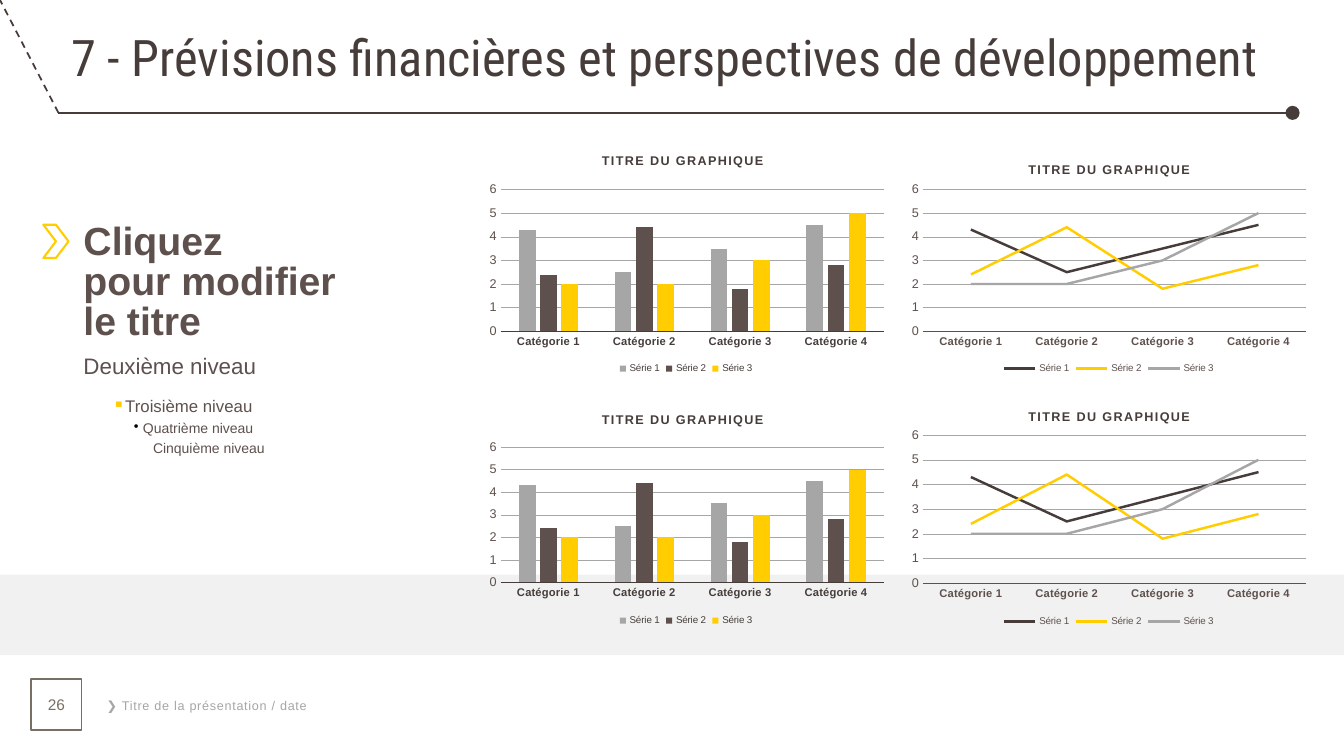
from pptx import Presentation
from pptx.chart.data import CategoryChartData
from pptx.dml.color import RGBColor
from pptx.enum.chart import XL_CHART_TYPE, XL_LEGEND_POSITION, XL_TICK_MARK
from pptx.enum.dml import MSO_LINE
from pptx.enum.shapes import MSO_CONNECTOR, MSO_SHAPE
from pptx.enum.text import MSO_ANCHOR, PP_ALIGN
from pptx.oxml import parse_xml
from pptx.oxml.ns import nsdecls, qn
from pptx.util import Inches, Pt
from lxml import etree

COLUMN, LINE = XL_CHART_TYPE.COLUMN_CLUSTERED, XL_CHART_TYPE.LINE
NO_TICK, LEGEND_BOTTOM = XL_TICK_MARK.NONE, XL_LEGEND_POSITION.BOTTOM
MIDDLE, TOP = MSO_ANCHOR.MIDDLE, MSO_ANCHOR.TOP
CENTER, JUSTIFY = PP_ALIGN.CENTER, PP_ALIGN.JUSTIFY

# Content
COLORS = {"dark": "463D3A", "brown": "5E514D", "taupe": "786E64", "yellow": "FFCD00",
          "grey": "A6A6A6", "band": "D9D9D9", "black": "000000"}
BODY_FONT, TITLE_FONT = "Arial", "Roboto Condensed"
TITLE = "7 - Prévisions financières et perspectives de développement"
FOOTER = "❯ Titre de la présentation / date"
PAGE_NUMBER = "26"
# text, size, bold, level
HEADINGS = [("Cliquez \vpour modifier \vle titre", 28, True),
            ("Deuxième niveau", 16, False)]
# text, size, level, left margin, hanging indent, bullet, bullet colour
SUBLEVELS = [("Troisième niveau", 12, 2, 0.39, -0.10, "▪", "yellow"),
             ("Quatrième niveau", 10, 3, 0.59, -0.09, "•", "black"),
             ("Cinquième niveau", 10, 4, 0.78, -0.09, None, None)]
CHART_TITLE = "TITRE DU GRAPHIQUE"
CATEGORIES = ["Catégorie 1", "Catégorie 2", "Catégorie 3", "Catégorie 4"]
SERIES = {"Série 1": (4.3, 2.5, 3.5, 4.5),
          "Série 2": (2.4, 4.4, 1.8, 2.8),
          "Série 3": (2, 2, 3, 5)}
# Series colours, text colour, left edge, title position inside the chart
STYLES = {COLUMN: (("grey", "brown", "yellow"), "dark", 4.76, (0.29, 0.02)),
          LINE: (("dark", "yellow", "grey"), "brown", 8.95, (0.3, 0.06))}
CHART_WIDTH = 4.09
# type, top, height, plot area top and height as shares of the chart
CHARTS = [(COLUMN, 4.01, 2.24, 0.19, 0.6), (LINE, 1.44, 2.31, 0.19, 0.61),
          (LINE, 3.89, 2.37, 0.18, 0.62), (COLUMN, 1.44, 2.31, 0.19, 0.61)]


def rgb(name):
    return RGBColor.from_string(COLORS[name])


def style_font(font, size, color, bold=False, name=BODY_FONT):
    font.size, font.bold, font.name = Pt(size), bold, name
    font.color.rgb = rgb(color)


def style_line(line, color, width):
    line.color.rgb = rgb(color)
    line.width = Pt(width)


def add_outline(preset, box, fill=None, line=None, width=1.25):
    shape = slide.shapes.add_shape(preset, *map(Inches, box))
    shape.shadow.inherit = False
    if fill:
        shape.fill.solid()
        shape.fill.fore_color.rgb = rgb(fill)
    else:
        shape.fill.background()
    if line:
        style_line(shape.line, line, width)
    else:
        shape.line.fill.background()
    return shape


def add_rule(start, end):
    rule = slide.shapes.add_connector(MSO_CONNECTOR.STRAIGHT, *map(Inches, start + end))
    style_line(rule.line, "dark", 1.25)
    etree.SubElement(rule._element.spPr, qn("a:effectLst"))
    return rule


def add_text(box, anchor):
    frame = slide.shapes.add_textbox(*map(Inches, box)).text_frame
    frame.word_wrap = True
    frame.vertical_anchor = anchor
    return frame


def place(parent, index, **shares):
    for old in parent.findall(qn("c:layout")):
        parent.remove(old)
    values = "".join(f'<c:{key} val="{value}"/>' for key, value in shares.items())
    parent.insert(index, parse_xml(
        f'<c:layout {nsdecls("c")}><c:manualLayout>{values}</c:manualLayout></c:layout>'))


def add_chart(kind, top, height, plot_top, plot_height):
    series_colors, text_color, left, (title_x, title_y) = STYLES[kind]
    data = CategoryChartData()
    data.categories = CATEGORIES
    for name, values in SERIES.items():
        data.add_series(name, values)
    chart = slide.shapes.add_chart(
        kind, *map(Inches, (left, top, CHART_WIDTH, height)), data).chart
    style_font(chart.font, 10, "black")

    # Title and plot area
    title_frame = chart.chart_title.text_frame
    title_frame.text = CHART_TITLE
    title_run = title_frame.paragraphs[0].runs[0]
    style_font(title_run.font, 9, "dark", True)
    title_run._r.get_or_add_rPr().set("spc", "100")
    chart.chart_title.include_in_layout = False
    place(chart._chartSpace.xpath("c:chart/c:title")[0], 1,
          xMode="edge", yMode="edge", x=title_x, y=title_y)
    place(chart._chartSpace.xpath("c:chart/c:plotArea")[0], 0, layoutTarget="inner",
          xMode="edge", yMode="edge", x=0.05, y=plot_top, w=0.93, h=plot_height)

    # Axes and legend
    categories, values = chart.category_axis, chart.value_axis
    for axis in (categories, values):
        axis.major_tick_mark = axis.minor_tick_mark = NO_TICK
    style_font(categories.tick_labels.font, 8, text_color, True)
    style_line(categories.format.line, text_color, 0.75)
    style_font(values.tick_labels.font, 9, "brown")
    values.format.line.fill.background()
    values.minimum_scale, values.maximum_scale, values.major_unit = 0, 6, 1
    style_line(values.major_gridlines.format.line, "grey", 0.25)
    chart.has_legend = True
    chart.legend.position = LEGEND_BOTTOM
    chart.legend.include_in_layout = False
    style_font(chart.legend.font, 7, text_color)

    # Series
    plot = chart.plots[0]
    plot.vary_by_categories = False
    if kind == COLUMN:
        plot.gap_width, plot.overlap = 219, -27
    for series, color in zip(plot.series, series_colors):
        if kind == COLUMN:
            series.format.fill.solid()
            series.format.fill.fore_color.rgb = rgb(color)
        else:
            series.smooth = False
            style_line(series.format.line, color, 1.75)


prs = Presentation()
prs.slide_width, prs.slide_height = Inches(13.33), Inches(7.5)
slide = prs.slides.add_slide(prs.slide_layouts[6])

# Band and title rule
band = add_outline(MSO_SHAPE.RECTANGLE, (0, 5.7, 13.33, 0.8), fill="band")
band_color = band._element.spPr.find(qn("a:solidFill"))[0]
etree.SubElement(band_color, qn("a:alpha"), val="35000")
add_rule((12.82, 1.12), (0.58, 1.12))
add_rule((0.58, 1.12), (0, 0)).line.dash_style = MSO_LINE.DASH
add_outline(MSO_SHAPE.OVAL, (12.75, 1.05, 0.14, 0.14), fill="dark")

# Footer and page number
footer = add_text((0.96, 6.87, 2.77, 0.25), TOP).paragraphs[0]
footer.text = FOOTER
style_font(footer.runs[0].font, 9, "grey")
footer.runs[0]._r.get_or_add_rPr().set("spc", "50")
page = add_outline(MSO_SHAPE.RECTANGLE, (0.31, 6.74, 0.5, 0.5), line="taupe").text_frame
page.text = PAGE_NUMBER
page.vertical_anchor = MIDDLE
page.paragraphs[0].alignment = CENTER
style_font(page.paragraphs[0].runs[0].font, 11, "taupe")

# Text levels
levels = add_text((0.73, 1.66, 3.66, 3.81), MIDDLE)
levels.margin_bottom = Inches(0.43)
for number, (text, size, bold) in enumerate(HEADINGS):
    heading = levels.add_paragraph() if number else levels.paragraphs[0]
    heading.text = text
    heading.line_spacing, heading.space_after = 0.85, Pt(9)
    for run in heading.runs:
        style_font(run.font, size, "brown", bold)
for text, size, level, margin, indent, bullet, bullet_color in SUBLEVELS:
    item = levels.add_paragraph()
    item.text = text
    item.level, item.alignment, item.line_spacing = level, JUSTIFY, 1.2
    props = item._p.get_or_add_pPr()
    props.set("marL", str(Inches(margin)))
    props.set("indent", str(Inches(indent)))
    if bullet:
        tint = etree.SubElement(props, qn("a:buClr"))
        etree.SubElement(tint, qn("a:srgbClr"), val=COLORS[bullet_color])
        etree.SubElement(props, qn("a:buChar"), char=bullet)
    else:
        etree.SubElement(props, qn("a:buNone"))
    style_font(item.runs[0].font, size, "brown")
add_outline(MSO_SHAPE.CHEVRON, (0.43, 2.23, 0.25, 0.33), line="yellow", width=1.5)

# Slide title
title = add_text((0.61, 0.27, 12.55, 0.68), MIDDLE).paragraphs[0]
title.text = TITLE
title.line_spacing = 0.85
style_font(title.runs[0].font, 36, "dark", name=TITLE_FONT)

# Charts
for chart_spec in CHARTS:
    add_chart(*chart_spec)

prs.save("out.pptx")
